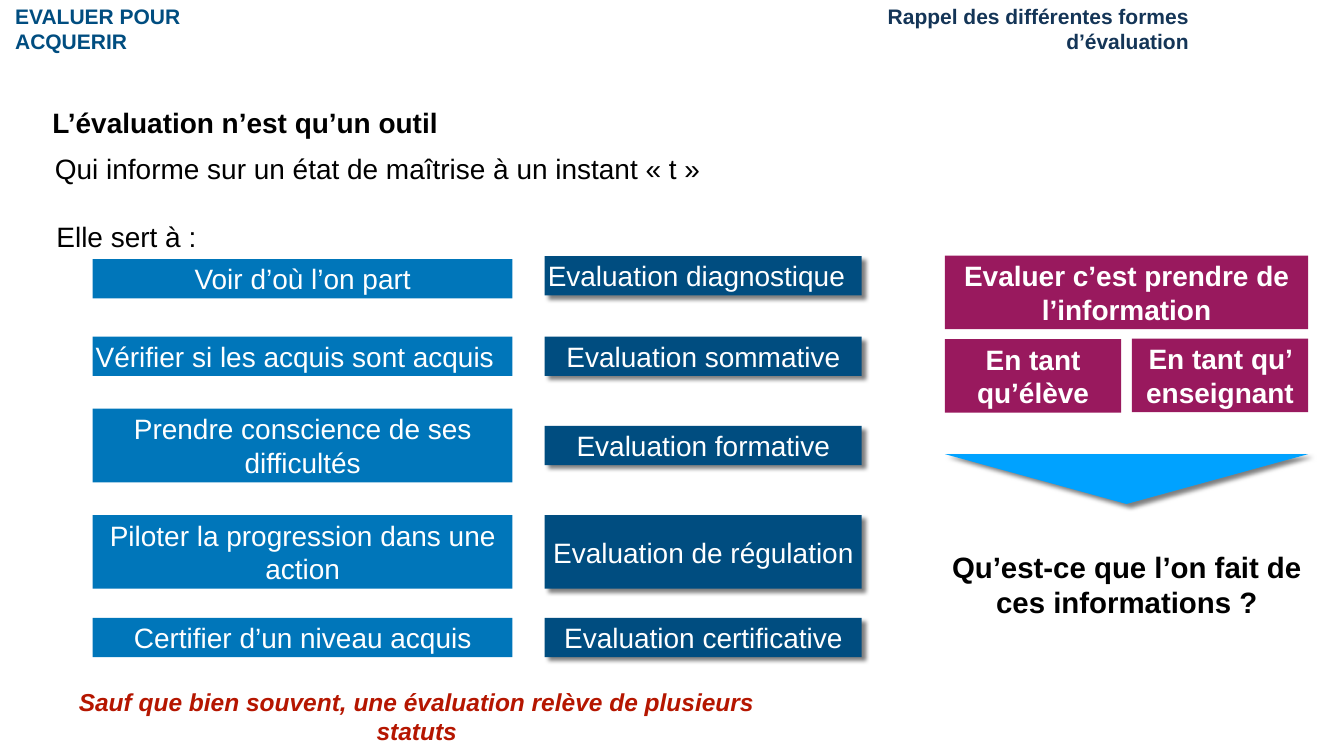
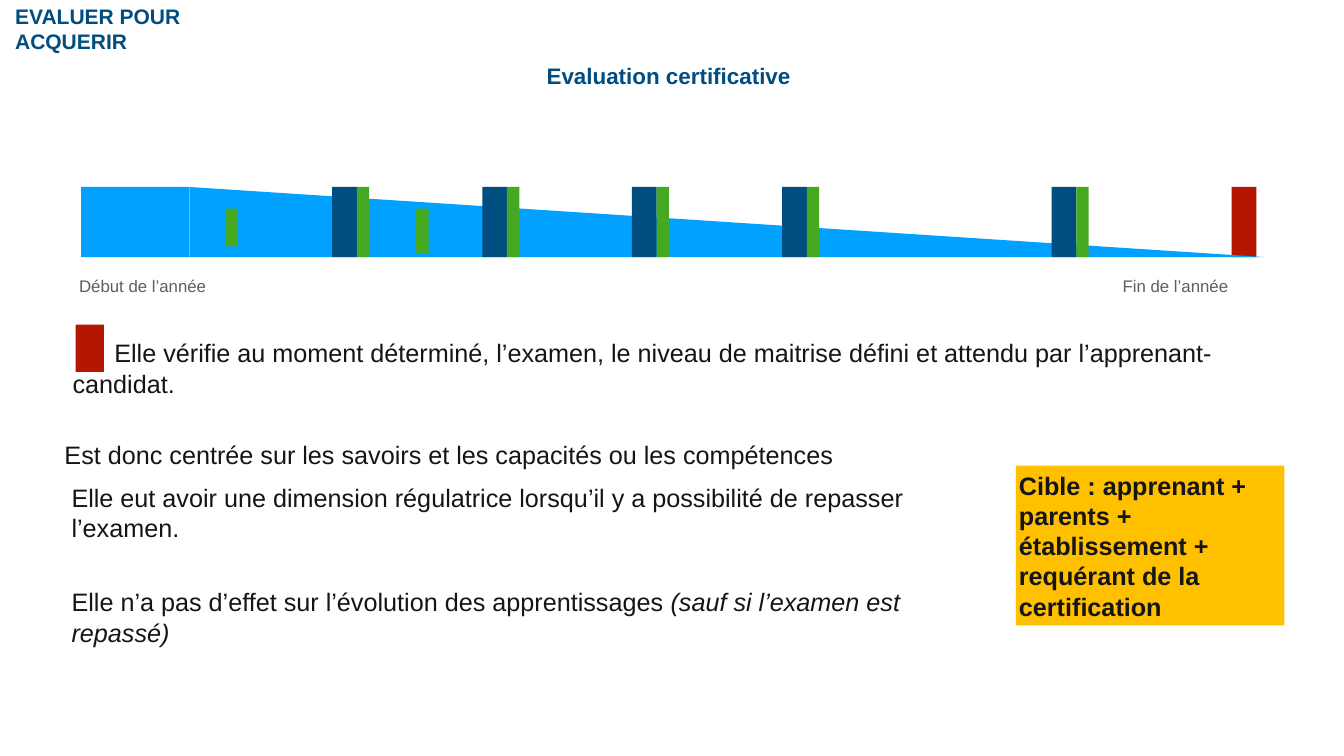
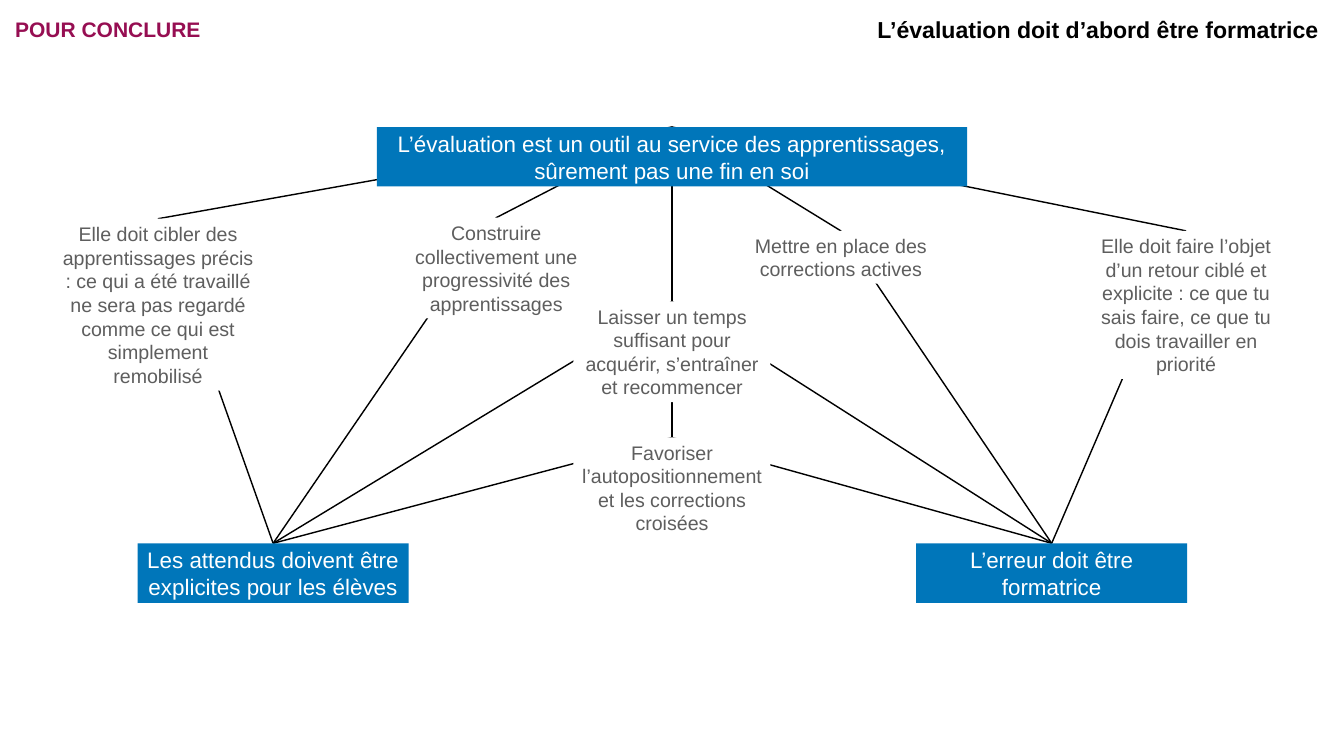
from lxml import etree
from pptx import Presentation
from pptx.dml.color import RGBColor
from pptx.enum import shapes, text
from pptx.oxml.ns import qn
from pptx.util import Inches, Pt

FONT = "Arial"
WHITE = RGBColor(0xFF, 0xFF, 0xFF)
BLACK = RGBColor(0, 0, 0)
INK = RGBColor(0x15, 0x15, 0x15)
GREY = RGBColor(0x5E, 0x5E, 0x5E)
NAVY = RGBColor(0x00, 0x4D, 0x80)
DEEP_NAVY = RGBColor(0x14, 0x35, 0x57)
BLUE = RGBColor(0x00, 0x76, 0xBA)
SKY = RGBColor(0x00, 0xA1, 0xFF)
ARROW_BLUE = RGBColor(0x00, 0xA2, 0xFF)
PLUM = RGBColor(0x99, 0x19, 0x5E)
DARK_PLUM = RGBColor(0x96, 0x0E, 0x52)
RED = RGBColor(0xB5, 0x16, 0x00)
GREEN = RGBColor(0x45, 0xAA, 0x21)
YELLOW = RGBColor(0xFF, 0xC0, 0x00)
LEFT, CENTER, RIGHT = text.PP_ALIGN.LEFT, text.PP_ALIGN.CENTER, text.PP_ALIGN.RIGHT
INSET = 0.06


def write(shape, words, size, color, bold=False, italic=False, align=CENTER,
          wrap=True, left_inset=INSET, right_inset=INSET):
    frame = shape.text_frame
    frame.word_wrap = wrap
    frame.auto_size = text.MSO_AUTO_SIZE.NONE
    frame.vertical_anchor = text.MSO_ANCHOR.MIDDLE
    frame.margin_left, frame.margin_right = Inches(left_inset), Inches(right_inset)
    frame.margin_top = frame.margin_bottom = Inches(INSET)
    para = frame.paragraphs[0]
    para.add_run().text = words
    para.alignment = align
    font = para.font
    font.name, font.size, font.bold, font.italic = FONT, Pt(size), bold, italic
    font.color.rgb = color
    return para


def label(page, box, words, size, color, **style):
    shape = page.shapes.add_textbox(*map(Inches, box))
    return write(shape, words, size, color, **style)


def paint(shape, fill, shadow=False):
    shape.fill.solid()
    shape.fill.fore_color.rgb = fill
    shape.line.fill.background()
    shape.shadow.inherit = False
    if shadow:
        effects = shape.element.spPr.find(qn("a:effectLst"))
        outer = etree.SubElement(effects, qn("a:outerShdw"), blurRad=str(Pt(6)),
                                 dist=str(Pt(7.6)), dir=str(43 * 60000),
                                 algn="tl", rotWithShape="0")
        tint = etree.SubElement(outer, qn("a:srgbClr"), val="000000")
        etree.SubElement(tint, qn("a:alpha"), val="50000")


def panel(page, box, fill, shadow=False):
    shape = page.shapes.add_shape(shapes.MSO_SHAPE.RECTANGLE, *map(Inches, box))
    paint(shape, fill, shadow)
    return shape


def caption(page, box, fill, words, size=40, color=WHITE, shadow=False, **style):
    shape = panel(page, box, fill, shadow)
    write(shape, words, size, color, **style)
    return shape


def triangle(page, points, fill, shadow=False):
    corners = [(Inches(x), Inches(y)) for x, y in points]
    builder = page.shapes.build_freeform(*corners[0])
    builder.add_line_segments(corners[1:], close=True)
    paint(builder.convert_to_shape(), fill, shadow)


def add_page(deck, heading, width=5.72, color=NAVY):
    page = deck.slides.add_slide(deck.slide_layouts[5])
    title = page.shapes.title
    title.left, title.top, title.width, title.height = map(Inches, (0.24, 0.27, width, 0.61))
    write(title, heading, 30, color, bold=True, align=LEFT, wrap=False)
    return page


def purposes_grid(page, left, top):
    rows = [
        (0.06, 0.78, "Voir d’où l’on part", 0, 0.78, "Evaluation diagnostique"),
        (1.6, 0.78, "Vérifier si les acquis sont acquis", 1.6, 0.78, "Evaluation sommative"),
        (3.03, 1.46, "Prendre conscience de ses difficultés", 3.37, 0.78, "Evaluation formative"),
        (5.14, 1.46, "Piloter la progression dans une action", 5.14, 1.46,
         "Evaluation de régulation"),
        (7.18, 0.78, "Certifier d’un niveau acquis", 7.18, 0.78, "Evaluation certificative"),
    ]
    flush_left = ("Vérifier si les acquis sont acquis", "Evaluation diagnostique")
    for purpose_y, purpose_h, purpose, form_y, form_h, form in rows:
        caption(page, (left, top + purpose_y, 8.33, purpose_h), BLUE, purpose,
                align=LEFT if purpose in flush_left else CENTER)
        caption(page, (left + 8.97, top + form_y, 6.29, form_h), NAVY, form, shadow=True,
                align=LEFT if form in flush_left else CENTER)


def information_column(page, left, top):
    width, half, height = 7.21, 3.5, 1.46
    for x, y, w, words in [
        (0, 0, width, "Evaluer c’est prendre de l’information"),
        (0, 1.66, half, "En tant qu’élève"),
        (width - half, 1.65, half, "En tant qu’ enseignant"),
    ]:
        caption(page, (left + x, top + y, w, height), PLUM, words, bold=True)
    arrow_top = top + 3.94
    triangle(page, [(left + width / 2, arrow_top + 0.99), (left + width, arrow_top),
                    (left, arrow_top)], ARROW_BLUE, shadow=True)
    label(page, (left - 0.44, top + 5.77, 8.1, 1.51),
          "Qu’est-ce que l’on fait de ces informations ?", 42, BLACK, bold=True)


def forms_page(deck):
    page = add_page(deck, "EVALUER POUR ACQUERIR")
    label(page, (17.57, 0.27, 8.63, 0.61), "Rappel des différentes formes d’évaluation",
          30, DEEP_NAVY, bold=True, align=RIGHT, left_inset=0, right_inset=2.61)
    label(page, (0.98, 2.03, 7.84, 0.78), "L’évaluation n’est qu’un outil",
          40, BLACK, bold=True, align=LEFT)
    label(page, (1.03, 2.96, 13.05, 0.76),
          "Qui informe sur un état de maîtrise à un instant « t »", 40, BLACK, align=LEFT)
    label(page, (1.06, 4.31, 3.02, 0.76), "Elle sert à :", 40, BLACK, align=LEFT)
    purposes_grid(page, 1.84, 5.08)
    information_column(page, 18.75, 5.07)
    label(page, (1.54, 13.86, 15.24, 0.69),
          "Sauf que bien souvent, une évaluation relève de plusieurs statuts",
          35, RED, bold=True, italic=True, left_inset=0, right_inset=1.78)


def year_timeline(page, left, top):
    height, bar = 1.39, 0.49
    panel(page, (left + 22.83, top, bar, height), RED)
    panel(page, (left, top, 2.14, height), SKY)
    wedge = left + 2.15
    triangle(page, [(wedge, top), (wedge, top + height), (wedge + 21.32, top + height)], SKY)
    for x in (4.98, 7.96, 10.93, 13.91, 19.26):
        panel(page, (left + x, top, bar, height), NAVY)
        panel(page, (left + x + bar, top, bar / 2, height), GREEN)
    for x, tall in ((2.86, 0.75), (6.65, 0.9)):
        panel(page, (left + x, top + 0.43, bar / 2, tall), GREEN)
    for x, width, words in ((-0.11, 2.66, "Début de l’année"), (20.61, 2.21, "Fin de l’année")):
        label(page, (left + x, top + 1.71, width, 0.5), words, 24, GREY, wrap=False)


def certification_notes(page, left, top):
    exam = label(page, (left + 0.02, top, 23.64, 1.32),
                 "Elle vérifie au moment déterminé, l’examen, le niveau de maitrise défini "
                 "et attendu par l’apprenant-candidat.", 36, INK, align=LEFT)
    properties = exam._p.get_or_add_pPr()
    properties.set("marL", "0")
    properties.set("indent", str(Inches(0.83)))
    panel(page, (left + 0.14, top - 0.2, 0.56, 0.94), RED)
    label(page, (left - 0.14, top + 2.01, 15.82, 0.72),
          "Est donc centrée sur les savoirs et les capacités ou les compétences",
          36, INK, align=LEFT)
    label(page, (left, top + 2.86, 18.23, 1.32),
          "Elle eut avoir une dimension régulatrice lorsqu’il y a possibilité de repasser "
          "l’examen.", 36, INK, align=LEFT)
    effect = label(page, (left, top + 4.94, 16.78, 1.32),
                   "Elle n’a pas d’effet sur l’évolution des apprentissages ",
                   36, INK, align=LEFT)
    span = effect.add_run()
    span.text = "(sauf si l’examen est repassé)"
    span.font.italic = True


def certification_page(deck):
    page = add_page(deck, "EVALUER POUR ACQUERIR")
    label(page, (10.78, 1.18, 4.98, 0.65), "Evaluation certificative",
          32, NAVY, bold=True, wrap=False)
    year_timeline(page, 1.61, 3.71)
    certification_notes(page, 1.36, 6.64)
    caption(page, (20.16, 9.24, 5.33, 3.17), YELLOW,
            "Cible : apprenant + parents + établissement + requérant de la certification",
            36, INK, bold=True, align=LEFT)


def link(page, start, end):
    line = page.shapes.add_connector(shapes.MSO_CONNECTOR.STRAIGHT, 0, 0, 0, 0)
    line.begin_connect(start, 0)
    line.end_connect(end, 0)
    line.line.color.rgb = BLACK
    line.line.width = Pt(2)
    etree.SubElement(line.element.spPr, qn("a:effectLst"))
    page.shapes.element.insert(2, line.element)


def principles_map(page, left, top):
    statements = {
        "outil": (6.3, 0, 11.71, "L’évaluation est un outil au service des apprentissages, "
                  "sûrement pas une fin en soi"),
        "attendus": (1.55, 8.26, 5.38, "Les attendus doivent être explicites pour les élèves"),
        "erreur": (17, 8.26, 5.38, "L’erreur doit être formatrice"),
    }
    principles = {
        "temps": (10.2, 3.46, 2, "Laisser un temps suffisant pour acquérir, s’entraîner "
                  "et recommencer"),
        "croisées": (10.2, 6.16, 2, "Favoriser l’autopositionnement et les corrections croisées"),
        "actives": (13.55, 2.06, 1.05, "Mettre en place des corrections actives"),
        "progressivité": (6.71, 1.8, 2, "Construire collectivement une progressivité "
                          "des apprentissages"),
        "cibles": (0, 1.82, 3.41, "Elle doit cibler des apprentissages précis : ce qui a été "
                   "travaillé ne sera pas regardé comme ce qui est simplement remobilisé"),
        "retour": (20.4, 2.06, 2.94, "Elle doit faire l’objet d’un retour ciblé et explicite : "
                   "ce que tu sais faire, ce que tu dois travailler en priorité"),
    }
    nodes = {}
    for name, (x, y, width, words) in statements.items():
        nodes[name] = caption(page, (left + x, top + y, width, 1.18), BLUE, words, 32)
    for name, (x, y, height, words) in principles.items():
        nodes[name] = caption(page, (left + x, top + y, 3.91, height), WHITE, words, 28, GREY)
    links = {
        "outil": ("cibles", "progressivité", "temps", "actives", "retour"),
        "attendus": ("cibles", "progressivité", "temps", "croisées"),
        "erreur": ("temps", "croisées", "actives", "retour"),
        "croisées": ("temps",),
    }
    for start, ends in links.items():
        for end in ends:
            link(page, nodes[start], nodes[end])


def conclusion_page(deck):
    page = add_page(deck, "POUR CONCLURE", 3.83, DARK_PLUM)
    label(page, (17.34, 0.25, 8.9, 0.65), "L’évaluation doit d’abord être formatrice",
          33, BLACK, bold=True, wrap=False)
    principles_map(page, 1.18, 2.52)


def main():
    deck = Presentation()
    deck.slide_width, deck.slide_height = Inches(26.67), Inches(15)
    forms_page(deck)
    certification_page(deck)
    conclusion_page(deck)
    deck.save("out.pptx")


if __name__ == "__main__":
    main()
